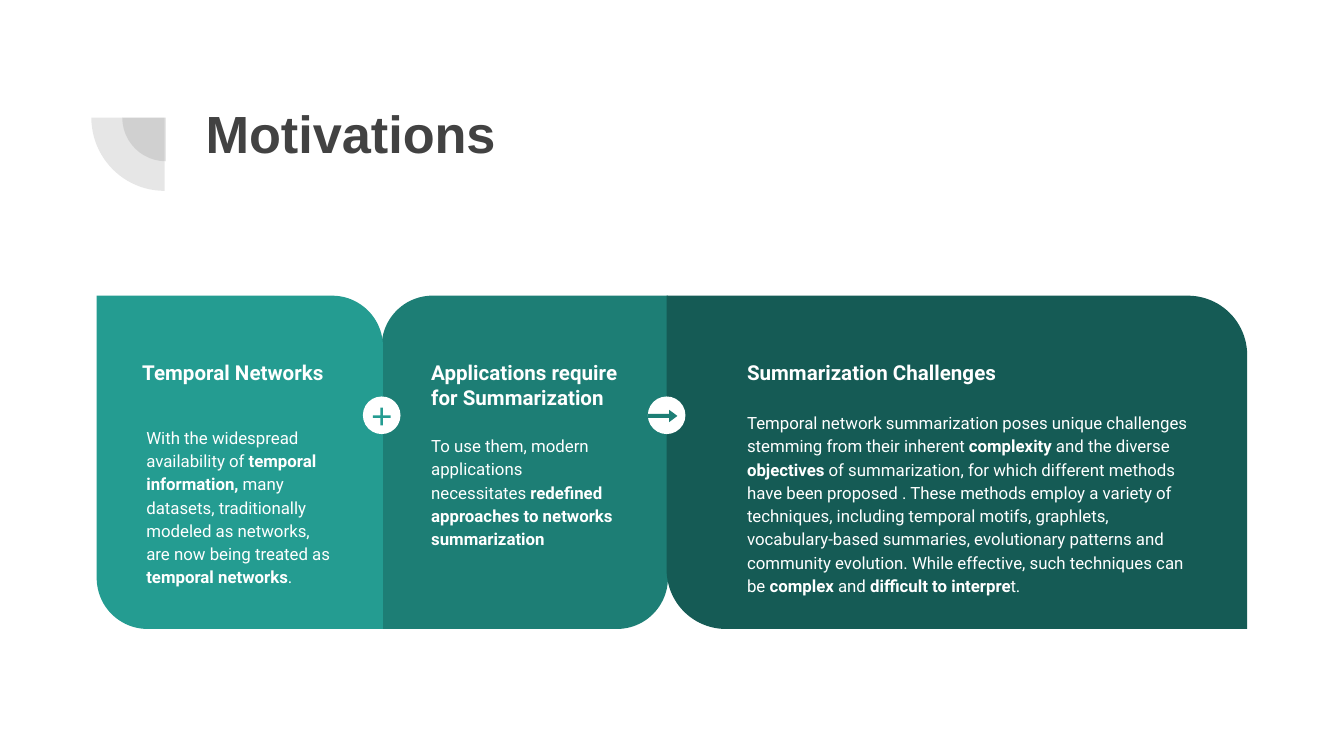
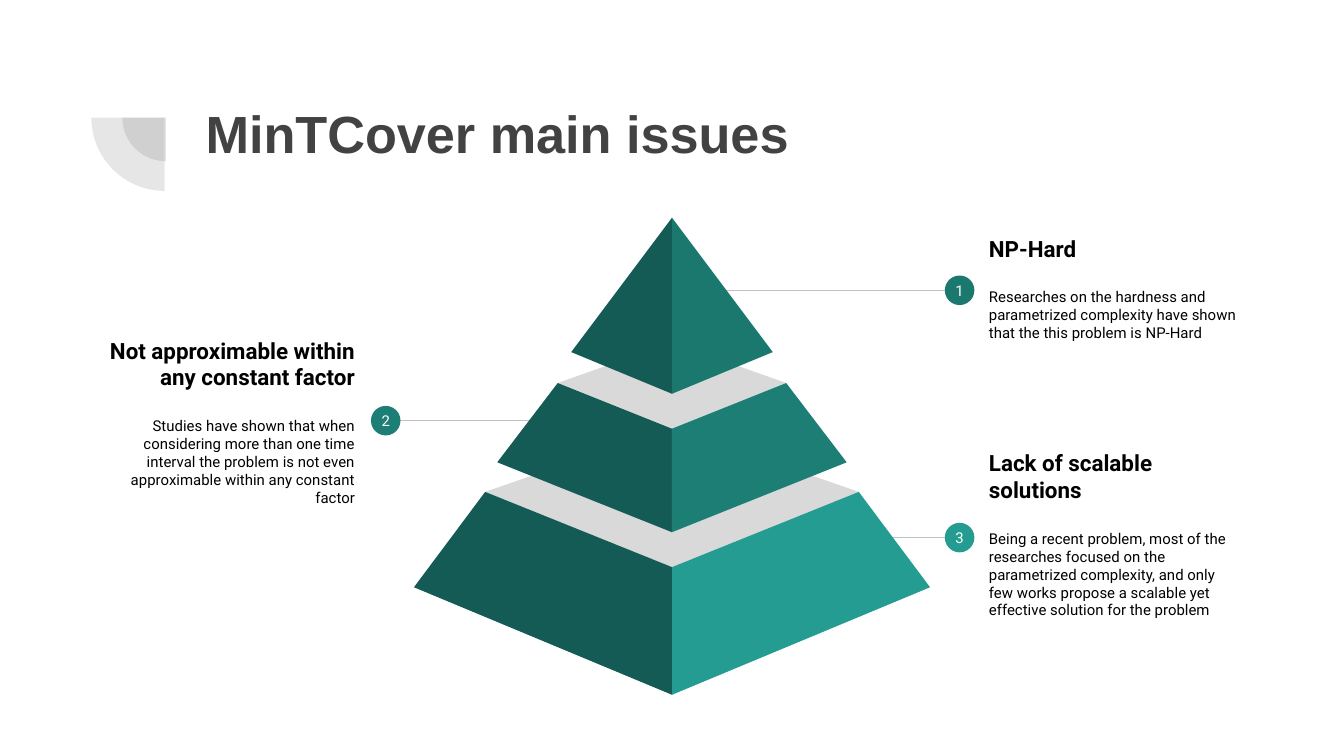
"""Builds two slides: the motivations for network summarization and the main issues of MinTCover."""
from lxml import etree
from pptx import Presentation
from pptx import util as u
from pptx.dml.color import RGBColor
from pptx.enum import shapes, text
from pptx.oxml.ns import qn

PX = 9144
INSET = 10 * PX
MIDLINE = 500

WHITE = RGBColor(0xFF, 0xFF, 0xFF)
BLACK = RGBColor(0x00, 0x00, 0x00)
CHARCOAL = RGBColor(0x42, 0x42, 0x42)
LINE_GREY = RGBColor(0xC2, 0xC2, 0xC2)
LID_GREY = RGBColor(0xD9, 0xD9, 0xD9)
LIGHT_TEAL = RGBColor(0x24, 0x9C, 0x91)
TEAL = RGBColor(0x1D, 0x7E, 0x75)
PEAK_TEAL = RGBColor(0x1B, 0x78, 0x6F)
DARK_TEAL = RGBColor(0x15, 0x5B, 0x55)

KIND = shapes.MSO_SHAPE
ALIGN = text.PP_ALIGN
ANCHOR = text.MSO_ANCHOR


def paint(shape, colour):
    """Give a shape a plain fill with no outline and no shadow."""
    shape.fill.solid()
    shape.fill.fore_color.rgb = colour
    shape.line.fill.background()
    shape.shadow.inherit = False
    return shape


def write(shape, paragraphs, colour, font="Roboto", align=ALIGN.LEFT, anchor=ANCHOR.TOP, inset=INSET):
    """Fill a shape with (size, spacing, runs) paragraphs, each run being (words, bold)."""
    frame = shape.text_frame
    frame.word_wrap = True
    frame.auto_size = text.MSO_AUTO_SIZE.NONE
    frame.vertical_anchor = anchor
    frame.margin_left = frame.margin_right = frame.margin_top = frame.margin_bottom = inset
    for index, (size, spacing, runs) in enumerate(paragraphs):
        paragraph = frame.add_paragraph() if index else frame.paragraphs[0]
        paragraph.alignment = align
        for setting, value in spacing.items():
            setattr(paragraph, setting, value)
        for words, bold in runs:
            run = paragraph.add_run()
            run.text = words
            run.font.name = font
            run.font.size = u.Pt(size)
            run.font.bold = bold
            run.font.color.rgb = colour


deck = Presentation()
deck.slide_width = 1000 * PX
deck.slide_height = deck.slide_width * 9 // 16
layout = deck.slide_layouts[5]
motivations = deck.slides.add_slide(layout)
issues = deck.slides.add_slide(layout)

for left, top, size in [(91, 55, 65), (68, 33, 109)]:
    quarter = motivations.shapes.add_shape(KIND.PIE, left * PX, top * PX, size * PX, size * PX)
    quarter.rotation = 270
    quarter.adjustments[0] = 108
    quarter.adjustments[1] = 162
    paint(quarter, CHARCOAL)
    tint = quarter.element.spPr.find(qn("a:solidFill"))[0]
    etree.SubElement(tint, qn("a:alpha")).set("val", "13000")
    layout.shapes.element.append(quarter.element)

for slide, heading in [(motivations, "Motivations"), (issues, "MinTCover main issues")]:
    title = slide.shapes.title
    title.left, title.top, title.width, title.height = 143 * PX, 65 * PX, 769 * PX, 109 * PX
    write(title, [(28, {}, [(heading, True)])], CHARCOAL, font="Arial")

cards = [
    (284, 213, TEAL, (0.178, 0), "Applications require for Summarization", 311, (311, 312, 159, 100), [
        ("To use them, modern applications necessitates", False),
        (" redefined approaches to networks summarization", True),
    ]),
    (72, 213, LIGHT_TEAL, (0, 0.178), "Temporal Networks", 96, (99, 306, 159, 141), [
        ("With the widespread availability of ", False),
        ("temporal information,", True),
        (" many datasets, traditionally modeled as networks, are now being treated as ", False),
        ("temporal networks", True),
        (".", False),
    ]),
    (496, 432, DARK_TEAL, (0, 0.178), "Summarization Challenges", 546, (546, 295, 348, 81), [
        ("Temporal network summarization poses unique challenges stemming from their inherent ", False),
        ("complexity", True),
        (" and the diverse ", False),
        ("objectives", True),
        (" of summarization, for which different methods have been proposed . These methods employ "
         "a variety of techniques, including temporal motifs, graphlets, vocabulary-based summaries, "
         "evolutionary patterns and community evolution. While effective, such techniques can be ", False),
        ("complex", True),
        (" and ", False),
        ("difficult to interpre", True),
        ("t.", False),
    ]),
]
for left, width, colour, corners, heading, heading_left, body_box, body in cards:
    card = motivations.shapes.add_shape(
        KIND.ROUND_2_DIAG_RECTANGLE, left * PX, 220 * PX, width * PX, 248 * PX)
    card.adjustments[0], card.adjustments[1] = corners
    paint(card, colour)
    heading_area = motivations.shapes.add_textbox(
        heading_left * PX, 258 * PX, body_box[2] * PX, 73 * PX)
    write(heading_area, [(11, {}, [(heading, True)])], WHITE)
    body_area = motivations.shapes.add_textbox(*(side * PX for side in body_box))
    write(body_area, [(9, {"line_spacing": 1.15, "space_after": u.Pt(16)}, body)], WHITE)

for left, kind, sign_box, adjustments, colour in [
    (482, KIND.RIGHT_ARROW, (482, 305, 22, 9), (0.32, 0.67), TEAL),
    (270, KIND.MATH_PLUS, (275, 301, 18, 18), (0.1,), LIGHT_TEAL),
]:
    paint(motivations.shapes.add_shape(KIND.OVAL, left * PX, 295 * PX, 28 * PX, 28 * PX), WHITE)
    sign = motivations.shapes.add_shape(kind, *(side * PX for side in sign_box))
    for index, value in enumerate(adjustments):
        sign.adjustments[index] = value
    paint(sign, colour)

issue_notes = [
    ("3", LIGHT_TEAL, 660, 724, 400, 703, 726, 322, ALIGN.LEFT, "Lack of scalable solutions",
     "Being a recent problem, most of the researches focused on the parametrized complexity, "
     "and only few works propose a scalable yet effective solution for the problem"),
    ("2", TEAL, 397, 283, 313, 276, 70, 238, ALIGN.RIGHT, "Not approximable within any constant factor",
     "Studies have shown that when considering more than one time interval the problem is not "
     "even approximable within any constant factor"),
    ("1", PEAK_TEAL, 537, 724, 216, 703, 726, 139, ALIGN.LEFT, "NP-Hard",
     "Researches on the hardness and parametrized complexity have shown that the this problem is NP-Hard"),
]
for number, colour, start, end, level, dot_left, note_left, note_top, align, heading, body in issue_notes:
    leader = issues.shapes.add_connector(
        shapes.MSO_CONNECTOR.STRAIGHT, start * PX, level * PX, end * PX, level * PX)
    leader.line.color.rgb = LINE_GREY
    leader.line.width = u.Pt(0.75)
    etree.SubElement(leader.element.spPr, qn("a:effectLst"))
    note = issues.shapes.add_textbox(note_left * PX, note_top * PX, 204 * PX, 151 * PX)
    write(note, [
        (12, {}, [(heading, True)]),
        (8, {"space_before": u.Pt(14), "space_after": u.Pt(16)}, [(body, False)]),
    ], BLACK, align=align, anchor=ANCHOR.MIDDLE)
    dot = issues.shapes.add_shape(KIND.OVAL, dot_left * PX, (level - 11) * PX, 22 * PX, 22 * PX)
    paint(dot, colour)
    write(dot, [(8, {}, [(number, False)])], WHITE, align=ALIGN.CENTER, anchor=ANCHOR.MIDDLE, inset=0)

tiers = [
    ([(361, 366), (308, 437), (MIDLINE, 517), (MIDLINE, 422)], 318, LIGHT_TEAL),
    ([(415, 285), (370, 344), (MIDLINE, 396), (MIDLINE, 319)], 255, TEAL),
    ([(MIDLINE, 162), (425, 262), (MIDLINE, 293)], None, PEAK_TEAL),
]
for left_face, lid_back, colour in tiers:
    right_face = [(2 * MIDLINE - x, y) for x, y in left_face]
    faces = [(left_face, DARK_TEAL), (right_face, colour)]
    if lid_back:
        lid = [left_face[0], left_face[-1], right_face[0], (MIDLINE, lid_back)]
        faces.insert(0, (lid, LID_GREY))
    for corners, face_colour in faces:
        outline = issues.shapes.build_freeform(*corners[0], scale=PX)
        outline.add_line_segments(corners[1:], close=True)
        paint(outline.convert_to_shape(), face_colour)

deck.save("out.pptx")
